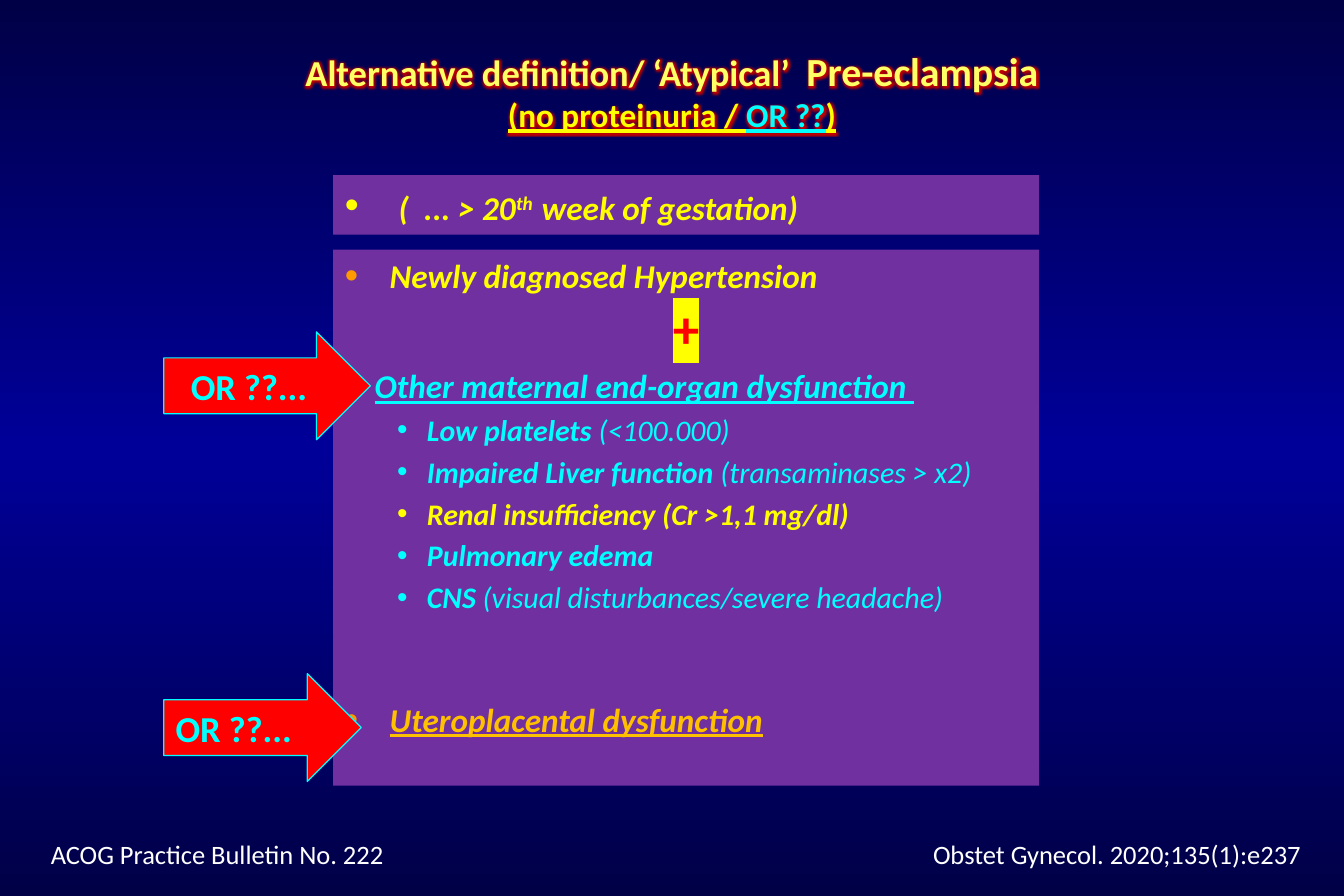
from copy import deepcopy

from pptx import Presentation
from pptx.dml.color import RGBColor
from pptx.enum.shapes import MSO_SHAPE as Shape
from pptx.enum.text import MSO_ANCHOR as Anchor, PP_ALIGN as Align
from pptx.oxml import parse_xml
from pptx.oxml.ns import nsdecls, qn
from pptx.util import Pt

COLORS = {
    "navy": "000047", "blue": "000099", "purple": "7030A0", "red": "FF0000",
    "glow": "C00000", "cream": "FFFF66", "yellow": "FFFF00", "cyan": "00FFFF",
    "orange": "FF9900", "gold": "FFC000", "white": "FFFFFF",
}
FONT = "Calibri"


def rgb(name):
    return RGBColor.from_string(COLORS[name])


def element(tag, inner="", attributes=""):
    return parse_xml(f"<a:{tag} {nsdecls('a')} {attributes}>{inner}</a:{tag}>")


def color_xml(name):
    return f'<a:srgbClr val="{COLORS[name]}"/>'


def style(font, size=None, color=None, bold=None, italic=None, underline=None):
    if size:
        font.size = Pt(size)
    if color:
        font.color.rgb = rgb(color)
    for key, value in (("bold", bold), ("italic", italic), ("underline", underline)):
        if value is not None:
            setattr(font, key, value)


def add_span(para, text, **look):
    span = para.add_run()
    span.text = text
    style(span.font, **look)
    return span


def format_para(para, margin=0, indent=0, before=0, bullet=None, bullet_size=100,
                align=Align.LEFT, **look):
    para.alignment = align
    para.space_before = Pt(before)
    props = para._p.get_or_add_pPr()
    props.set("marL", str(Pt(margin)))
    props.set("indent", str(Pt(indent)))
    if bullet:
        props.append(element("buClr", color_xml(bullet)))
        props.append(element("buSzPct", attributes=f'val="{bullet_size * 1000}"'))
        props.append(element("buFont", attributes='typeface="Arial"'))
        props.append(element("buChar", attributes='char="•"'))
    else:
        props.append(element("buNone"))
    para.font.name = FONT
    style(para.font, **look)


def add_block(page, kind, box, fill, anchor):
    block = page.shapes.add_shape(kind, *map(Pt, box))
    block.shadow.inherit = False
    block.fill.solid()
    block.fill.fore_color.rgb = rgb(fill)
    block.line.fill.background()
    block.text_frame.word_wrap = True
    block.text_frame.vertical_anchor = anchor
    return block


def paint_background(page):
    fill = page.background.fill
    fill.gradient()
    fill.gradient_angle = 90
    stops = fill.gradient_stops
    for stop, color, position in zip(stops, ("navy", "blue"), (0, 0.5)):
        stop.color.rgb = rgb(color)
        stop.position = position
    stop_list = next(page.element.iter(qn("a:gsLst")))
    last = deepcopy(stop_list[0])
    last.set("pos", "100000")
    stop_list.append(last)


def fill_title(page, box):
    title = page.shapes.title
    title.left, title.top, title.width, title.height = map(Pt, box)
    frame = title.text_frame
    frame.word_wrap = True
    frame.vertical_anchor = Anchor.MIDDLE
    para = frame.paragraphs[0]
    format_para(para, align=Align.CENTER, bold=True)
    add_span(para, "Alternative definition/ ‘Atypical’  ", size=22, color="cream")
    add_span(para, "Pre-eclampsia", size=24, color="cream")
    para.add_line_break()
    for text, color in (("(no proteinuria / ", "yellow"), ("OR ??", "cyan"), (")", "yellow")):
        add_span(para, text, size=20, color=color, underline=True)
    for span in para.runs:
        glow = f'<a:glow rad="{Pt(4)}">{color_xml("glow")}</a:glow>'
        span._r.rPr.find(qn("a:solidFill")).addnext(element("effectLst", glow))


def add_gestation(page, box):
    frame = add_block(page, Shape.RECTANGLE, box, "purple", Anchor.TOP).text_frame
    para = frame.paragraphs[0]
    format_para(para, 27, -27, bullet="yellow", color="yellow", bold=True, italic=True)
    add_span(para, " ", size=24)
    add_span(para, "(  ... > 20", size=20)
    raised = add_span(para, "th  ", size=20)
    raised._r.rPr.set("baseline", "30000")
    add_span(para, "week of gestation)", size=20)


def add_criteria(page, box):
    frame = add_block(page, Shape.RECTANGLE, box, "purple", Anchor.TOP).text_frame
    heading = dict(size=20, bold=True, italic=True)
    main = dict(margin=27, indent=-27, bullet="orange", bullet_size=115, **heading)

    para = frame.paragraphs[0]
    format_para(para, color="yellow", **main)
    add_span(para, "Newly diagnosed Hypertension")

    para = frame.add_paragraph()
    format_para(para, align=Align.CENTER, size=32, color="red", bold=True)
    plus = add_span(para, "+", color="red")
    plus._r.rPr.find(qn("a:solidFill")).addnext(element("highlight", color_xml("yellow")))

    para = frame.add_paragraph()
    format_para(para, 18, before=4, color="cyan", underline=True, **heading)
    add_span(para, "Other maternal end-organ dysfunction ")

    for name, detail, color in (
        ("Low platelets ", "(<100.000)", "cyan"),
        ("Impaired Liver function ", "(transaminases > x2)", "cyan"),
        ("Renal insufficiency (Cr >1,1 mg/dl)", "", "yellow"),
        ("Pulmonary edema", "", "cyan"),
        ("CNS ", "(visual disturbances/severe headache)", "cyan"),
    ):
        para = frame.add_paragraph()
        format_para(para, 49.5, -18, 3.6, bullet=color, size=18, color=color, italic=True)
        add_span(para, name, bold=True)
        if detail:
            add_span(para, detail, bold=False)

    para = frame.add_paragraph()
    format_para(para, before=51, color="gold", underline=True, **main)
    add_span(para, "Uteroplacental dysfunction")


def add_arrow(page, box, text, align):
    arrow = add_block(page, Shape.RIGHT_ARROW, box, "red", Anchor.MIDDLE)
    arrow.adjustments[0] = 0.517
    arrow.line.color.rgb = rgb("cyan")
    arrow.line.width = Pt(0.75)
    para = arrow.text_frame.paragraphs[0]
    format_para(para, align=align, size=22, color="cyan", bold=True)
    add_span(para, text)


def add_citation(page, box):
    frame = page.shapes.add_textbox(*map(Pt, box)).text_frame
    frame.word_wrap = True
    frame.vertical_anchor = Anchor.MIDDLE
    para = frame.paragraphs[0]
    props = para._p.get_or_add_pPr()
    tab = f'<a:tab pos="{Pt(box[2] - 17.5)}" algn="r"/>'
    props.append(element("tabLst", tab))
    para.font.name = FONT
    style(para.font, size=16, color="white")
    add_span(para, "ACOG Practice Bulletin No. 222\tObstet Gynecol. 2020;135(1):e237")


def build_slide(deck):
    page = deck.slides.add_slide(deck.slide_layouts[5])
    paint_background(page)
    fill_title(page, (40.5, 9.5, 729, 90))
    add_criteria(page, (200.75, 150.5, 425.5, 323))
    add_gestation(page, (200.75, 105.5, 425.5, 36))
    add_arrow(page, (98.75, 200, 124.5, 65), "OR ??... ", Align.CENTER)
    add_arrow(page, (98.75, 406, 119, 65), "OR ??...", Align.LEFT)
    add_citation(page, (23.5, 501.5, 771, 26.5))


def main():
    deck = Presentation()
    deck.slide_width, deck.slide_height = Pt(810), Pt(540)
    build_slide(deck)
    deck.save("out.pptx")


if __name__ == "__main__":
    main()
